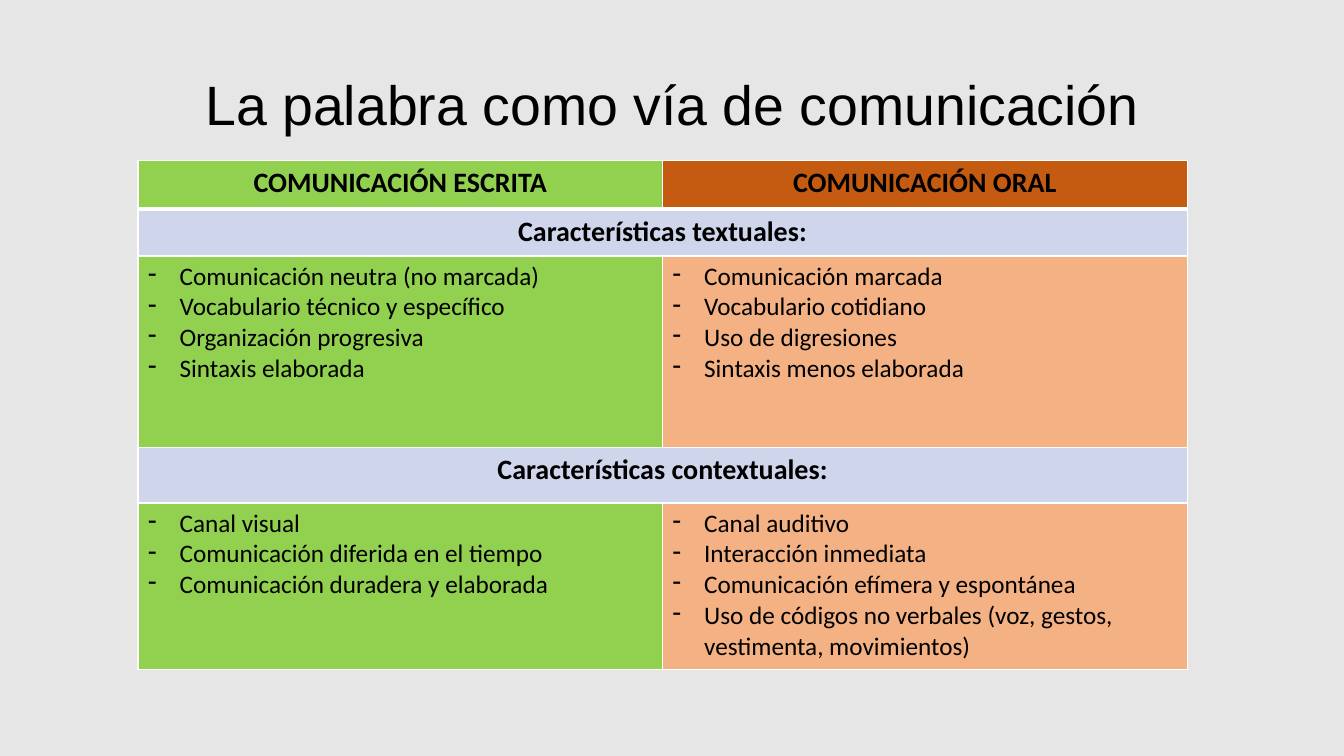
import pptx
import pptx.util
import pptx.dml.color
import pptx.enum.text
import pptx.oxml
import pptx.oxml.ns
from lxml import etree

Pt = pptx.util.Pt
ALIGN = pptx.enum.text.PP_ALIGN
ANCHOR = pptx.enum.text.MSO_ANCHOR

GREEN, RUST, PEACH, BLUE = "92D050", "C55A11", "F4B183", "CFD5EA"


def color(code):
    return pptx.dml.color.RGBColor.from_string(code)


def child(node, tag, **attrs):
    return etree.SubElement(node, pptx.oxml.ns.qn(tag), **attrs)


def write(frame, text, size=18, font="Calibri", ink="000000", bold=False,
          align=ALIGN.LEFT, space=None, dash=False):
    for i, line in enumerate(text.split("\n")):
        para = frame.paragraphs[0] if i == 0 else frame.add_paragraph()
        para.alignment = align
        if space:
            para.line_spacing = space
        if dash:
            props = para._p.get_or_add_pPr()
            props.set("marL", str(Pt(22.5)))
            props.set("indent", str(-Pt(22.5)))
            child(props, "a:buFontTx")
            child(props, "a:buChar", char="-")
        run = para.add_run()
        run.text = line
        run.font.size = Pt(size)
        run.font.name = font
        run.font.bold = bold
        run.font.color.rgb = color(ink)


class Board:
    def __init__(self, deck, back):
        self.font = "Calibri"
        self.rule = "FFFFFF"
        self.slide = deck.slides.add_slide(deck.slide_layouts[6])
        fill = self.slide.background.fill
        fill.solid()
        fill.fore_color.rgb = color(back)

    def title(self, text, left, top, width, height):
        box = self.slide.shapes.add_textbox(Pt(left), Pt(top), Pt(width), Pt(height))
        frame = box.text_frame
        frame.word_wrap = True
        frame.vertical_anchor = ANCHOR.MIDDLE
        write(frame, text, size=39.6, font="Arial", align=ALIGN.CENTER, space=0.9)

    def table(self, left, top, cols, rows):
        shape = self.slide.shapes.add_table(
            len(rows), len(cols), Pt(left), Pt(top), Pt(sum(cols)), Pt(sum(rows)))
        grid = shape.table
        for col, width in zip(grid.columns, cols):
            col.width = Pt(width)
        for row, height in zip(grid.rows, rows):
            row.height = Pt(height)
        return grid

    def edge(self, cell, top=1, base=1):
        props = cell._tc.get_or_add_tcPr()
        for side, width in (("L", 1), ("R", 1), ("T", top), ("B", base)):
            line = child(props, "a:ln" + side, w=str(Pt(width)))
            fill = child(line, "a:solidFill")
            child(fill, "a:srgbClr", val=self.rule)

    def cell(self, cell, fill, text="", top=1, base=1, anchor=ANCHOR.TOP, **style):
        self.edge(cell, top, base)
        cell.fill.solid()
        cell.fill.fore_color.rgb = color(fill)
        cell.vertical_anchor = anchor
        if text:
            write(cell.text_frame, text, font=self.font, **style)


def main():
    deck = pptx.Presentation()
    deck.slide_width, deck.slide_height = Pt(960), Pt(540)
    board = Board(deck, "E7E6E6")
    board.title("La palabra como vía de comunicación", 98.6, 43.2, 763.2, 67.7)
    grid = board.table(98.6, 114.5, [374.7] * 2, [34.6, 33.8, 136.8, 39.6, 118.8])

    head = dict(size=20, bold=True, align=ALIGN.CENTER)
    board.cell(grid.cell(0, 0), GREEN, "COMUNICACIÓN ESCRITA", base=3, **head)
    board.cell(grid.cell(0, 1), RUST, "COMUNICACIÓN ORAL", base=3, **head)

    bands = [
        (1, "Características textuales:", 3, ANCHOR.MIDDLE),
        (3, "Características contextuales:", 1, ANCHOR.TOP),
    ]
    for row, text, top, anchor in bands:
        grid.cell(row, 0).merge(grid.cell(row, 1))
        board.cell(grid.cell(row, 0), BLUE, text, top=top, anchor=anchor, **head)
        board.cell(grid.cell(row, 1), BLUE, top=top)

    lists = {
        2: ("Comunicación neutra (no marcada)\nVocabulario técnico y específico\n"
            "Organización progresiva\nSintaxis elaborada",
            "Comunicación marcada\nVocabulario cotidiano\n"
            "Uso de digresiones\nSintaxis menos elaborada"),
        4: ("Canal visual\nComunicación diferida en el tiempo\n"
            "Comunicación duradera y elaborada",
            "Canal auditivo\nInteracción inmediata\nComunicación efímera y espontánea\n"
            "Uso de códigos no verbales (voz, gestos, vestimenta, movimientos)"),
    }
    for row, pair in lists.items():
        for col, (text, fill) in enumerate(zip(pair, (GREEN, PEACH))):
            board.cell(grid.cell(row, col), fill, text, dash=True)

    deck.save("out.pptx")


if __name__ == "__main__":
    main()
